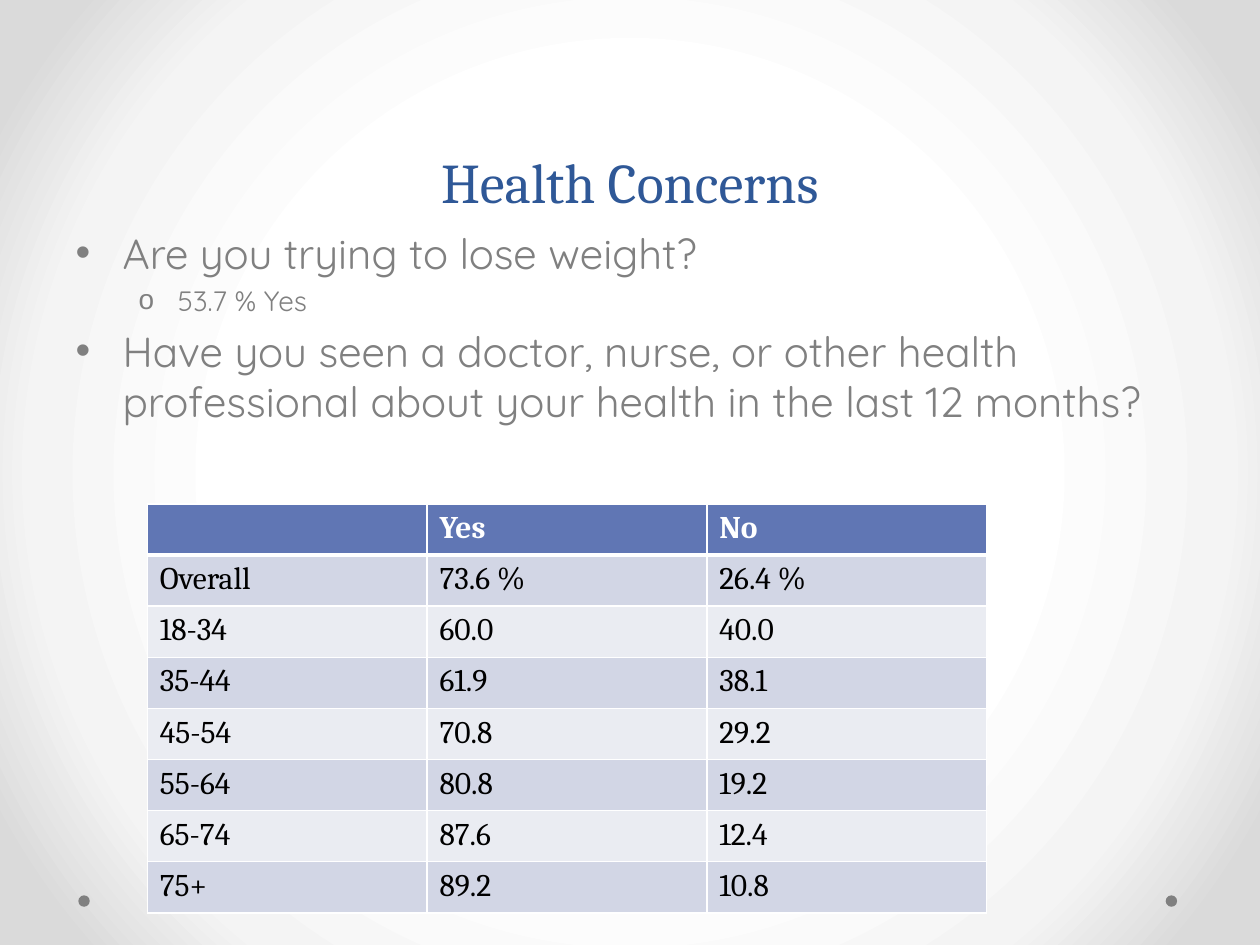
from pptx import Presentation
from pptx import util as u
from pptx.dml.color import RGBColor
from pptx.enum import shapes, text
from pptx.oxml import parse_xml
from pptx.oxml.ns import nsdecls

BLUE = RGBColor(0x2F, 0x58, 0x97)
GRAY = RGBColor(0x80, 0x80, 0x80)
WHITE = RGBColor(0xFF, 0xFF, 0xFF)
BLACK = RGBColor(0x00, 0x00, 0x00)
HEADER = RGBColor(0x60, 0x76, 0xB4)
BAND_DARK = RGBColor(0xD2, 0xD6, 0xE5)
BAND_LIGHT = RGBColor(0xEA, 0xEC, 0xF2)
BACKGROUND_STOPS = (
    (50, WHITE),
    (76, RGBColor(0xF4, 0xF4, 0xF4)),
    (92, RGBColor(0xDA, 0xDA, 0xDA)),
)

QUESTIONS = (
    (0, "Are you trying to lose weight?"),
    (1, "53.7 % Yes"),
    (0, "Have you seen a doctor, nurse, or other health "
        "professional about your health in the last 12 months?"),
)
BULLET_LEVELS = (
    (24, "•", 0.95, -0.95),
    (16, "o", 2.06, -0.79),
)
DOCTOR_VISITS = (
    ("", "Yes", "No"),
    ("Overall", "73.6 %", "26.4 %"),
    ("18-34", "60.0", "40.0"),
    ("35-44", "61.9", "38.1"),
    ("45-54", "70.8", "29.2"),
    ("55-64", "80.8", "19.2"),
    ("65-74", "87.6", "12.4"),
    ("75+", "89.2", "10.8"),
)


class SlideBuilder:
    serif = "Cambria"
    sans = "Quicksand"

    def __init__(self, presentation):
        self.slide = presentation.slides.add_slide(presentation.slide_layouts[1])

    def place(self, shape, left, top, width, height):
        shape.left, shape.top = u.Cm(left), u.Cm(top)
        shape.width, shape.height = u.Cm(width), u.Cm(height)

    def add_run(self, paragraph, content, font, size, color, bold=False):
        run = paragraph.add_run()
        run.text = content
        run.font.name = font
        run.font.size = u.Pt(size)
        run.font.bold = bold
        run.font.color.rgb = color

    def background(self, stops):
        stop_xml = "".join(
            f'<a:gs pos="{position * 1000}"><a:srgbClr val="{color}"/></a:gs>'
            for position, color in stops
        )
        background = parse_xml(
            f'<p:bg {nsdecls("p", "a")}><p:bgPr>'
            f'<a:gradFill rotWithShape="1"><a:gsLst>{stop_xml}</a:gsLst>'
            '<a:path path="circle">'
            '<a:fillToRect l="50000" t="50000" r="50000" b="50000"/>'
            '</a:path></a:gradFill><a:effectLst/></p:bgPr></p:bg>'
        )
        self.slide.element.cSld.insert(0, background)

    def dot(self, left, top, size):
        shape = self.slide.shapes.add_shape(
            shapes.MSO_SHAPE.OVAL, u.Cm(left), u.Cm(top), u.Cm(size), u.Cm(size)
        )
        shape.shadow.inherit = False
        shape.fill.solid()
        shape.fill.fore_color.rgb = GRAY
        shape.line.fill.background()

    def title(self, content, *box):
        shape = self.slide.shapes.title
        self.place(shape, *box)
        frame = shape.text_frame
        frame.auto_size = text.MSO_AUTO_SIZE.NONE
        frame.vertical_anchor = text.MSO_ANCHOR.BOTTOM
        paragraph = frame.paragraphs[0]
        paragraph.alignment = text.PP_ALIGN.CENTER
        paragraph.line_spacing = u.Pt(58)
        self.add_run(paragraph, content, self.serif, 32, BLUE)

    def bullets(self, items, *box):
        shape = self.slide.placeholders[1]
        self.place(shape, *box)
        frame = shape.text_frame
        frame.auto_size = text.MSO_AUTO_SIZE.NONE
        for index, (level, content) in enumerate(items):
            paragraph = frame.add_paragraph() if index else frame.paragraphs[0]
            size, mark, margin, indent = BULLET_LEVELS[level]
            paragraph.level = level
            paragraph.space_before = u.Pt(size * 0.2)
            self.add_run(paragraph, content, self.sans, size, GRAY)
            properties = paragraph._p.get_or_add_pPr()
            properties.set("marL", str(u.Cm(margin)))
            properties.set("indent", str(u.Cm(indent)))
            properties.append(
                parse_xml(f'<a:buChar {nsdecls("a")} char="{mark}"/>')
            )

    def borders(self, cell, top, bottom):
        properties = cell._tc.get_or_add_tcPr()
        for side, width in (("L", 1), ("R", 1), ("T", top), ("B", bottom)):
            properties.append(parse_xml(
                f'<a:ln{side} {nsdecls("a")} w="{u.Pt(width)}"><a:solidFill>'
                f'<a:srgbClr val="{WHITE}"/></a:solidFill></a:ln{side}>'
            ))

    def table(self, rows, left, top, column_width, row_height):
        columns = len(rows[0])
        table = self.slide.shapes.add_table(
            len(rows), columns, u.Cm(left), u.Cm(top),
            u.Cm(column_width * columns), u.Cm(row_height * len(rows)),
        ).table
        for row_index, values in enumerate(rows):
            is_header = row_index == 0
            band = BAND_DARK if row_index % 2 else BAND_LIGHT
            for column_index, value in enumerate(values):
                cell = table.cell(row_index, column_index)
                self.borders(cell, 3 if row_index == 1 else 1, 3 if is_header else 1)
                cell.fill.solid()
                cell.fill.fore_color.rgb = HEADER if is_header else band
                if value:
                    self.add_run(
                        cell.text_frame.paragraphs[0], value, self.serif, 18,
                        WHITE if is_header else BLACK, is_header,
                    )


def main():
    presentation = Presentation()
    presentation.slide_width = u.Cm(25.4)
    presentation.slide_height = u.Cm(19.05)
    builder = SlideBuilder(presentation)
    builder.background(BACKGROUND_STOPS)
    for left in (23.5, 1.58):
        builder.dot(left, 18.05, 0.23)
    builder.title("Health Concerns", 1.27, 0, 22.86, 4.45)
    builder.bullets(QUESTIONS, 1.27, 4.45, 22.86, 12.57)
    builder.table(DOCTOR_VISITS, 2.97, 10.16, 5.64, 1.03)
    presentation.save("out.pptx")


if __name__ == "__main__":
    main()
